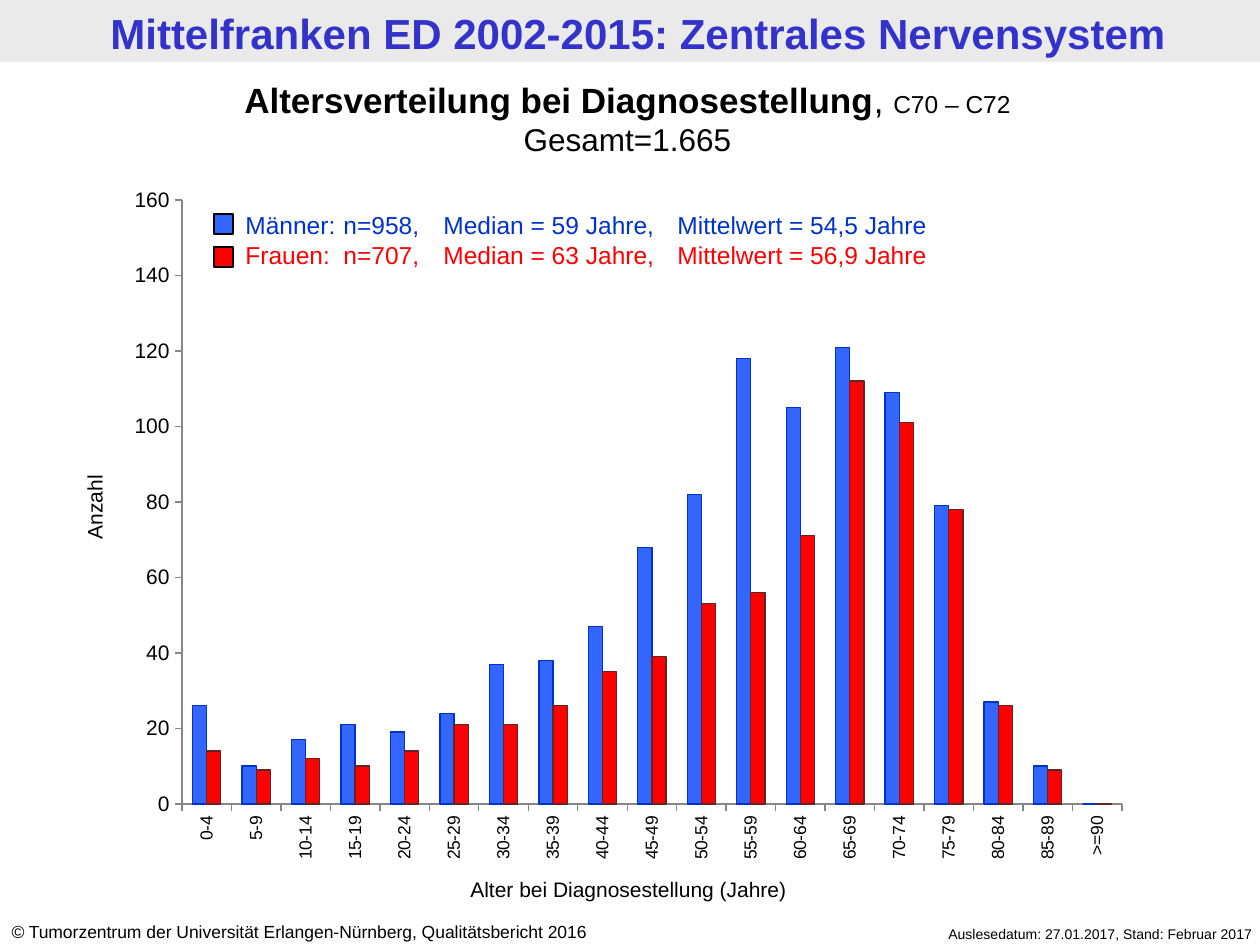
from lxml import etree
from pptx import Presentation
from pptx.chart.data import CategoryChartData
from pptx.dml.color import RGBColor
from pptx.enum.chart import XL_CHART_TYPE, XL_TICK_MARK
from pptx.enum.shapes import MSO_SHAPE
from pptx.enum.text import PP_ALIGN
from pptx.oxml import parse_xml
from pptx.oxml.ns import nsdecls, qn
from pptx.util import Pt

COLUMNS = XL_CHART_TYPE.COLUMN_CLUSTERED
OUTSIDE = XL_TICK_MARK.OUTSIDE
RECT = MSO_SHAPE.RECTANGLE
LEFT, CENTER, RIGHT = PP_ALIGN.LEFT, PP_ALIGN.CENTER, PP_ALIGN.RIGHT
EMU_PER_PX = 914400 / 126
FONT = "Arial"
BLUE, RED = "3366FF", "FF0000"
CHART_BOX = (115, 175, 1028, 699)
PLOT_BOX = (182, 200, 940, 604)
LEGEND_TABS = (98, 111, 198, 432)
AGES = [f"{a}-{a + 4}" for a in range(0, 90, 5)] + [">=90"]
SERIES = [
    ("Männer", BLUE, "0033CC",
     (26, 10, 17, 21, 19, 24, 37, 38, 47, 68, 82, 118, 105, 121, 109, 79, 27, 10, 0)),
    ("Frauen", RED, "632523",
     (14, 9, 12, 10, 14, 21, 21, 26, 35, 39, 53, 56, 71, 112, 101, 78, 26, 9, 0)),
]


def px(n):
    """Convert pixels to EMU."""
    return round(n * EMU_PER_PX)


def rgb(value):
    """Return the colour for a hex string."""
    return RGBColor.from_string(value)


def add_rect(slide, box, fill, line=None):
    """Add a flat rectangle with an optional outline."""
    sp = slide.shapes.add_shape(RECT, *map(px, box))
    sp.shadow.inherit = False
    sp.fill.solid()
    sp.fill.fore_color.rgb = rgb(fill)
    if line:
        sp.line.color.rgb = rgb(line)
        sp.line.width = Pt(0.75)
    else:
        sp.line.fill.background()


def add_tabs(p, stops):
    """Give a paragraph left tab stops."""
    tabs = etree.SubElement(p._p.get_or_add_pPr(), qn("a:tabLst"))
    for stop in stops:
        etree.SubElement(tabs, qn("a:tab"), pos=str(px(stop)), algn="l")


def add_text(slide, box, paragraphs, size=12, color="000000", align=LEFT, rotation=0, tabs=()):
    """Add a text box of paragraphs, each a list of (text, format) runs."""
    sp = slide.shapes.add_textbox(*map(px, box))
    sp.rotation = rotation
    tf = sp.text_frame
    tf.word_wrap = True
    for i, runs in enumerate(paragraphs):
        p = tf.add_paragraph() if i else tf.paragraphs[0]
        p.alignment = align
        if tabs:
            add_tabs(p, tabs)
        for text, fmt in runs:
            r = p.add_run()
            r.text = text
            r.font.name = FONT
            r.font.size = Pt(fmt.get("size", size))
            r.font.bold = fmt.get("bold", False)
            r.font.italic = fmt.get("italic", False)
            r.font.color.rgb = rgb(fmt.get("color", color))


def style_axis(axis, size):
    """Set the ticks, line and labels of an axis."""
    axis.has_major_gridlines = False
    axis.major_tick_mark = OUTSIDE
    axis.format.line.color.rgb = rgb("868686")
    font = axis.tick_labels.font
    font.name, font.size = FONT, Pt(size)
    font.color.rgb = rgb("000000")


def place_plot(chart):
    """Fix the inner plot area within the chart."""
    (cx, cy, cw, ch), (x, y, w, h) = CHART_BOX, PLOT_BOX
    parts = {"x": (x - cx) / cw, "y": (y - cy) / ch, "w": w / cw, "h": h / ch}
    values = "".join(f'<c:{k} val="{v:.4f}"/>' for k, v in parts.items())
    area = chart._chartSpace.chart.plotArea
    for old in area.findall(qn("c:layout")):
        area.remove(old)
    area.insert(0, parse_xml(
        f'<c:layout {nsdecls("c")}><c:manualLayout><c:layoutTarget val="inner"/>'
        f'<c:xMode val="edge"/><c:yMode val="edge"/>{values}</c:manualLayout></c:layout>'))


def add_age_chart(slide):
    """Add the column chart of cases by age and sex."""
    data = CategoryChartData()
    data.categories = AGES
    for name, _, _, values in SERIES:
        data.add_series(name, values)
    chart = slide.shapes.add_chart(COLUMNS, *map(px, CHART_BOX), data).chart
    chart.has_legend = chart.has_title = False
    chart.font.name, chart.font.size = FONT, Pt(12)
    plot = chart.plots[0]
    plot.gap_width, plot.overlap = 150, 0
    plot.vary_by_categories = False
    for series, (_, fill, line, _) in zip(plot.series, SERIES):
        series.invert_if_negative = False
        series.format.fill.solid()
        series.format.fill.fore_color.rgb = rgb(fill)
        series.format.line.color.rgb = rgb(line)
        series.format.line.width = Pt(0.75)
    style_axis(chart.category_axis, 10)
    style_axis(chart.value_axis, 12)
    labels = chart.category_axis._element.find(qn("c:txPr"))
    labels.find(qn("a:bodyPr")).set("rot", "-5400000")
    axis = chart.value_axis
    axis.minimum_scale, axis.maximum_scale, axis.major_unit = 0, 160, 20
    place_plot(chart)


def main():
    """Build the slide and save it."""
    prs = Presentation()
    prs.slide_width, prs.slide_height = px(1260), px(945)
    slide = prs.slides.add_slide(prs.slide_layouts[6])

    add_rect(slide, (0, 0, 1260, 62), "EAEAEA")
    add_text(slide, (8, 1, 1260, 62),
             [[("Mittelfranken ED 2002-2015: Zentrales Nervensystem", {"bold": True})]],
             size=24, color="3333CC", align=CENTER)
    add_text(slide, (-1, 915, 660, 34),
             [[("©", {"italic": True}),
               (" Tumorzentrum der Universität Erlangen-Nürnberg, Qualitätsbericht 2016", {})]],
             size=10)
    add_text(slide, (838, 919, 427, 30),
             [[("Auslesedatum: 27.01.2017, Stand: Februar 2017", {})]], size=8, align=RIGHT)

    add_age_chart(slide)
    add_text(slide, (-5, 72, 1265, 93),
             [[("Altersverteilung bei Diagnosestellung", {"bold": True, "size": 20}),
               (", ", {"size": 20}), ("C70 – C72", {"size": 14})],
              [("Gesamt=1.665", {})]], size=18, align=CENTER)
    add_text(slide, (233, 204, 863, 72),
             [[("Männer: \tn=958, \tMedian = 59 Jahre, \tMittelwert = 54,5 Jahre", {})],
              [("Frauen: \tn=707, \tMedian = 63 Jahre,\tMittelwert = 56,9 Jahre", {"color": RED})]],
             size=14, color="0033CC", tabs=LEGEND_TABS)
    for y, fill in ((214, BLUE), (247, RED)):
        add_rect(slide, (214, y, 19, 20), fill, line="000000")
    add_text(slide, (435, 870, 387, 38),
             [[("Alter bei Diagnosestellung (Jahre)", {})]], align=CENTER)
    add_text(slide, (-70, 488, 329, 38), [[("Anzahl", {})]], align=CENTER, rotation=270)

    prs.save("out.pptx")


if __name__ == "__main__":
    main()
